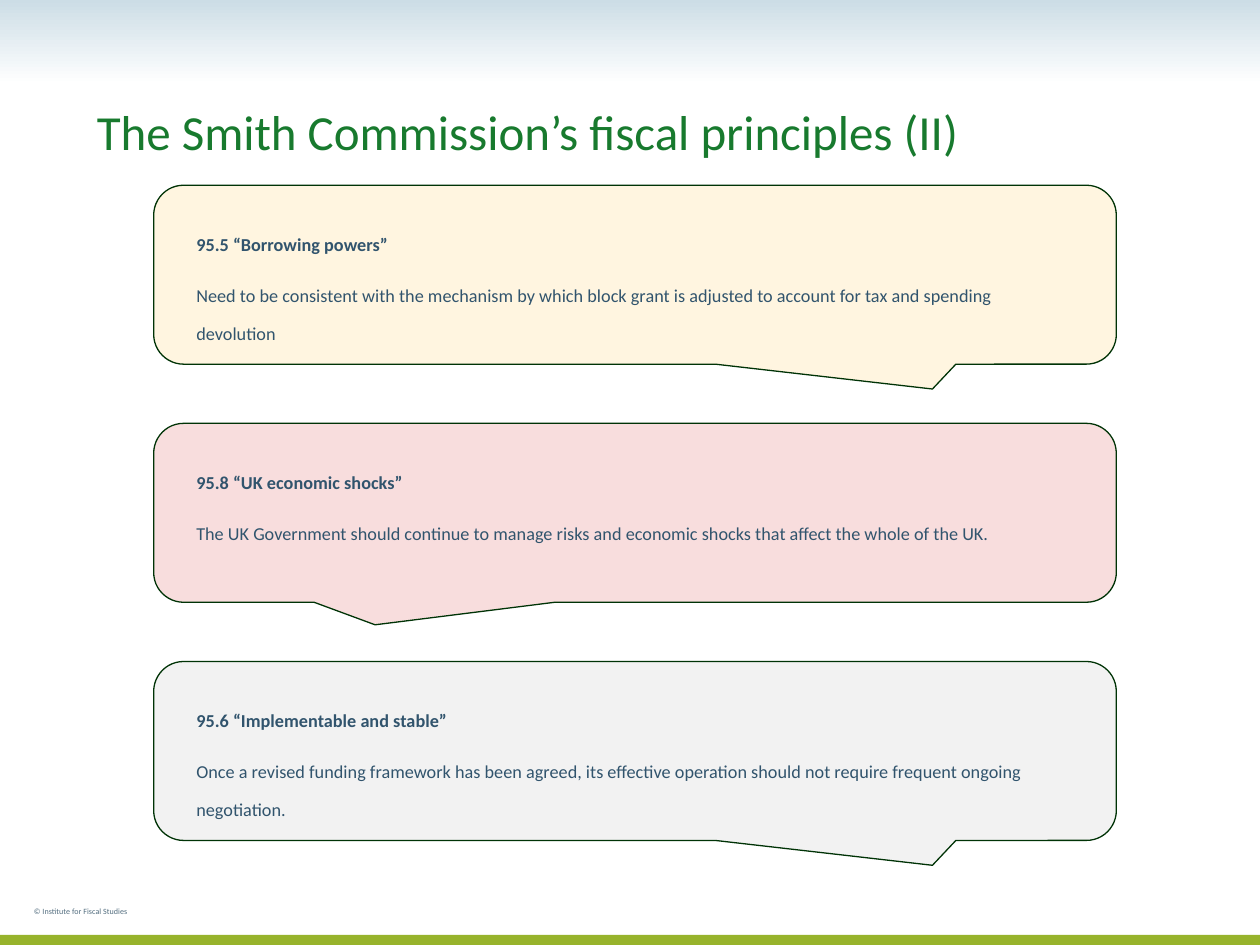
from pptx import Presentation
from pptx.dml.color import RGBColor
from pptx.enum.shapes import MSO_SHAPE
from pptx.enum.text import MSO_ANCHOR, MSO_AUTO_SIZE
from pptx.util import Inches, Pt

RECTANGLE = MSO_SHAPE.RECTANGLE
CALLOUT = MSO_SHAPE.ROUNDED_RECTANGULAR_CALLOUT
TOP, BOTTOM = MSO_ANCHOR.TOP, MSO_ANCHOR.BOTTOM
GROW = MSO_AUTO_SIZE.SHAPE_TO_FIT_TEXT

COLORS = {
    "sky": "CCDDE6", "white": "FFFFFF", "lime": "97B32C", "title": "187A2E",
    "footer": "526D7F", "body": "31546D", "outline": "003306",
    "cream": "FFF5E0", "pink": "F8DDDD", "grey": "F2F2F2",
}
TAIL_RIGHT = (0.309, 0.639, 0.167)
TAIL_LEFT = (-0.27, 0.626, 0.167)
PRINCIPLES = [
    ("95.5 “Borrowing powers”",
     "Need to be consistent with the mechanism by which block grant is adjusted "
     "to account for tax and spending devolution", "cream", TAIL_RIGHT),
    ("95.8 “UK economic shocks”",
     "The UK Government should continue to manage risks and economic shocks "
     "that affect the whole of the UK.", "pink", TAIL_LEFT),
    ("95.6 “Implementable and stable”",
     "Once a revised funding framework has been agreed, its effective operation "
     "should not require frequent ongoing negotiation.", "grey", TAIL_RIGHT),
]
CALLOUT_TOP, CALLOUT_STEP = 1.47, 1.89


def color(name):
    return RGBColor.from_string(COLORS[name])


def write(paragraph, text, size, ink, bold=False, lowered=False,
          line=1.0, before=0, after=0):
    """Fill a paragraph with one run; lowered sets it as a subscript."""
    paragraph.line_spacing = line
    paragraph.space_before, paragraph.space_after = Pt(before), Pt(after)
    run = paragraph.add_run()
    run.text = text
    font = run.font
    font.name, font.size, font.bold = "Calibri", Pt(size), bold
    font.color.rgb = color(ink)
    if lowered:
        run._r.get_or_add_rPr().set("baseline", "-15000")


class SlideBuilder:
    def __init__(self, slide):
        self.slide = slide

    def shape(self, kind, box, fill=None, outline=None):
        shape = self.slide.shapes.add_shape(kind, *map(Inches, box))
        shape.shadow.inherit = False
        if fill:
            shape.fill.solid()
            shape.fill.fore_color.rgb = color(fill)
        if outline:
            shape.line.color.rgb = color(outline)
            shape.line.width = Pt(0.75)
        else:
            shape.line.fill.background()
        return shape

    def gradient_band(self, box, start, end):
        fill = self.shape(RECTANGLE, box).fill
        fill.gradient()
        fill.gradient_angle = 270
        for stop, position, name in zip(fill.gradient_stops, (0, 1), (start, end)):
            stop.position = position
            stop.color.rgb = color(name)

    def text_frame(self, box, anchor=TOP):
        frame = self.slide.shapes.add_textbox(*map(Inches, box)).text_frame
        frame.word_wrap = True
        frame.vertical_anchor = anchor
        return frame

    def principle(self, top, heading, detail, fill, tail):
        callout = self.shape(CALLOUT, (1.22, top, 7.64, 1.42), fill, "outline")
        for index, value in enumerate(tail):
            callout.adjustments[index] = value
        frame = self.text_frame((1.46, top + 0.15, 7.17, 1.09))
        frame.auto_size = GROW
        frame.margin_top = Inches(0.1)
        style = dict(size=18, ink="body", lowered=True, line=0.95, after=3.6)
        write(frame.paragraphs[0], heading, bold=True, **style)
        write(frame.add_paragraph(), detail, before=3.6, **style)


def main():
    deck = Presentation()
    deck.slide_width, deck.slide_height = Inches(10), Inches(7.5)
    builder = SlideBuilder(deck.slides.add_slide(deck.slide_layouts[6]))

    builder.gradient_band((0, 0, 10, 0.67), "sky", "white")
    builder.shape(RECTANGLE, (0, 7.42, 10, 0.08), "lime")
    footer = builder.text_frame((0.17, 7.08, 2.75, 0.25))
    write(footer.paragraphs[0], "© Institute for Fiscal Studies",
          size=8, ink="footer", lowered=True)
    title = builder.text_frame((0.67, 0.25, 8.58, 1.08), BOTTOM)
    write(title.paragraphs[0], "The Smith Commission’s fiscal principles (II)",
          size=28, ink="title", line=0.9)
    for row, principle in enumerate(PRINCIPLES):
        builder.principle(CALLOUT_TOP + row * CALLOUT_STEP, *principle)

    deck.save("out.pptx")


if __name__ == "__main__":
    main()
